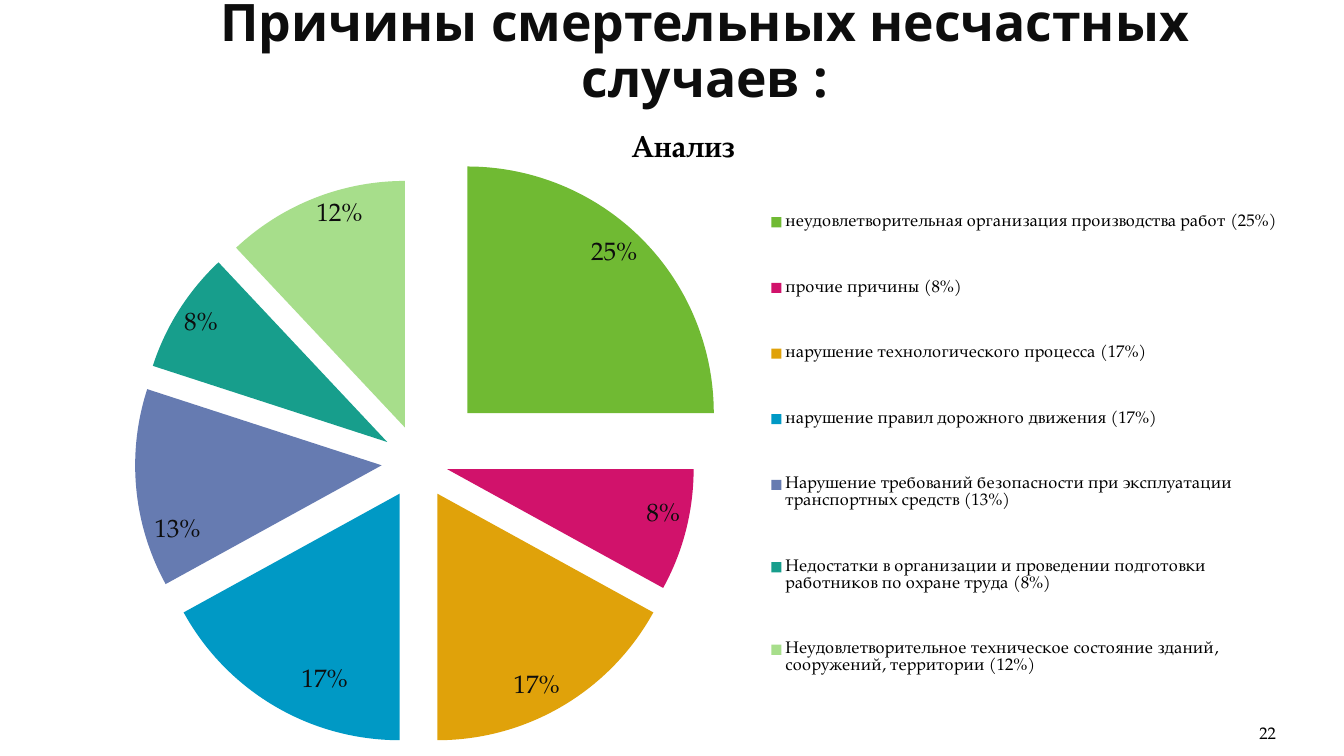
from lxml import etree
from pptx import Presentation
from pptx.chart.data import CategoryChartData
from pptx.dml.color import RGBColor
from pptx.enum.chart import XL_CHART_TYPE as ChartType
from pptx.enum.chart import XL_LABEL_POSITION as LabelPos
from pptx.enum.chart import XL_LEGEND_POSITION as LegendPos
from pptx.enum.text import MSO_ANCHOR as Anchor
from pptx.enum.text import PP_ALIGN as Align
from pptx.oxml.ns import qn
from pptx.util import Cm, Pt

SERIF = "TeX Gyre Pagella"
# cause, share, colour, explosion in percent
CAUSES = [
    ("неудовлетворительная организация производства работ (25%)", 0.25, "70BA33", 28),
    ("прочие причины (8%)", 0.08, "D1126B", 12),
    ("нарушение технологического процесса (17%)", 0.17, "E0A20A", 15),
    ("нарушение правил дорожного движения (17%)", 0.17, "0099C5", 15),
    ("Нарушение требований безопасности при эксплуатации транспортных средств (13%)",
     0.13, "667BB1", 15),
    ("Недостатки в организации и проведении подготовки работников по охране труда (8%)",
     0.08, "179E8C", 15),
    ("Неудовлетворительное техническое состояние зданий, сооружений, территории (12%)",
     0.12, "A7DE8B", 15),
]
LABEL_SHIFTS = {3: (0.02, -0.01), 4: (0.01, 0.09)}


def rgb(color):
    return RGBColor.from_string(color)


def set_font(font, size, color="000000", name=SERIF, bold=False):
    font.size, font.name, font.bold = Pt(size), name, bold
    font.color.rgb = rgb(color)


def chart_element(tag, val=None):
    el = etree.Element(qn(f"c:{tag}"))
    if val is not None:
        el.set("val", str(val))
    return el


def manual_layout(**values):
    layout = chart_element("layout")
    manual = etree.SubElement(layout, qn("c:manualLayout"))
    for tag, val in values.items():
        manual.append(chart_element(tag, val))
    return layout


def add_text(slide, box, text, align, anchor, margin_x):
    s = slide.shapes.add_textbox(*map(Cm, box))
    tf = s.text_frame
    tf.word_wrap = True
    tf.vertical_anchor = anchor
    tf.margin_left = tf.margin_right = Cm(margin_x)
    p = tf.paragraphs[0]
    p.text = text
    p.alignment = align
    return p


def add_title(slide, box):
    p = add_text(slide, box, "Причины смертельных несчастных случаев :",
                 Align.CENTER, Anchor.MIDDLE, 0.25)
    p.line_spacing = 0.9
    set_font(p.font, 36.9, "0D0D0D", "Open Sans", True)


def add_page_number(slide, box):
    p = add_text(slide, box, "22", Align.RIGHT, Anchor.BOTTOM, 0)
    set_font(p.font, 12)


def style_slices(series):
    for i, (_, _, color, explosion) in enumerate(CAUSES):
        fill = series.points[i].format.fill
        fill.solid()
        fill.fore_color.rgb = rgb(color)
        sp_pr = series._element.xpath(f"c:dPt[c:idx/@val='{i}']/c:spPr")[0]
        sp_pr.addprevious(chart_element("explosion", explosion))


def style_labels(series):
    labels = series.data_labels
    labels.show_value = True
    labels.number_format = "0%"
    labels.number_format_is_linked = False
    labels.position = LabelPos.INSIDE_END
    set_font(labels.font, 18, "0D0D0D")
    for i, (x, y) in LABEL_SHIFTS.items():
        label = series.points[i].data_label
        set_font(label.font, 18, "0D0D0D")
        label.position = LabelPos.INSIDE_END
        idx = series._element.xpath(f"c:dLbls/c:dLbl/c:idx[@val='{i}']")[0]
        idx.addnext(manual_layout(x=x, y=y))


def add_causes_chart(slide, box):
    data = CategoryChartData(number_format="0%")
    data.categories = [cause[0] for cause in CAUSES]
    data.add_series("Series 1", [cause[1] for cause in CAUSES])
    chart = slide.shapes.add_chart(ChartType.PIE, *map(Cm, box), data).chart
    set_font(chart.font, 18)

    chart.has_title = True
    p = chart.chart_title.text_frame.paragraphs[0]
    p.text = "Анализ"
    set_font(p.font, 21.6, bold=True)
    chart.chart_title.include_in_layout = False

    plot = chart.plots[0]
    plot.vary_by_categories = True
    style_slices(plot.series[0])
    style_labels(plot.series[0])
    area = plot._element.getparent()
    for old in area.findall(qn("c:layout")):
        area.remove(old)
    area.insert(0, manual_layout(layoutTarget="inner", xMode="edge", yMode="edge",
                                 x=0.08, y=0.115, w=0.405, h=0.885))

    chart.has_legend = True
    legend = chart.legend
    legend.position = LegendPos.RIGHT
    legend.include_in_layout = False
    set_font(legend.font, 12)
    for old in legend._element.findall(qn("c:layout")):
        legend._element.remove(old)
    legend._element.find(qn("c:legendPos")).addnext(
        manual_layout(xMode="edge", yMode="edge", x=0.565, y=0.09, w=0.43, h=0.88))


def main():
    prs = Presentation()
    prs.slide_width, prs.slide_height = Cm(33.87), Cm(19.05)
    slide = prs.slides.add_slide(prs.slide_layouts[6])
    add_title(slide, (3.38, 0.33, 28.78, 2))
    add_causes_chart(slide, (1.88, 2.72, 30.68, 16))
    add_page_number(slide, (29.34, 17.83, 2.82, 1.02))
    prs.save("out.pptx")


if __name__ == "__main__":
    main()
